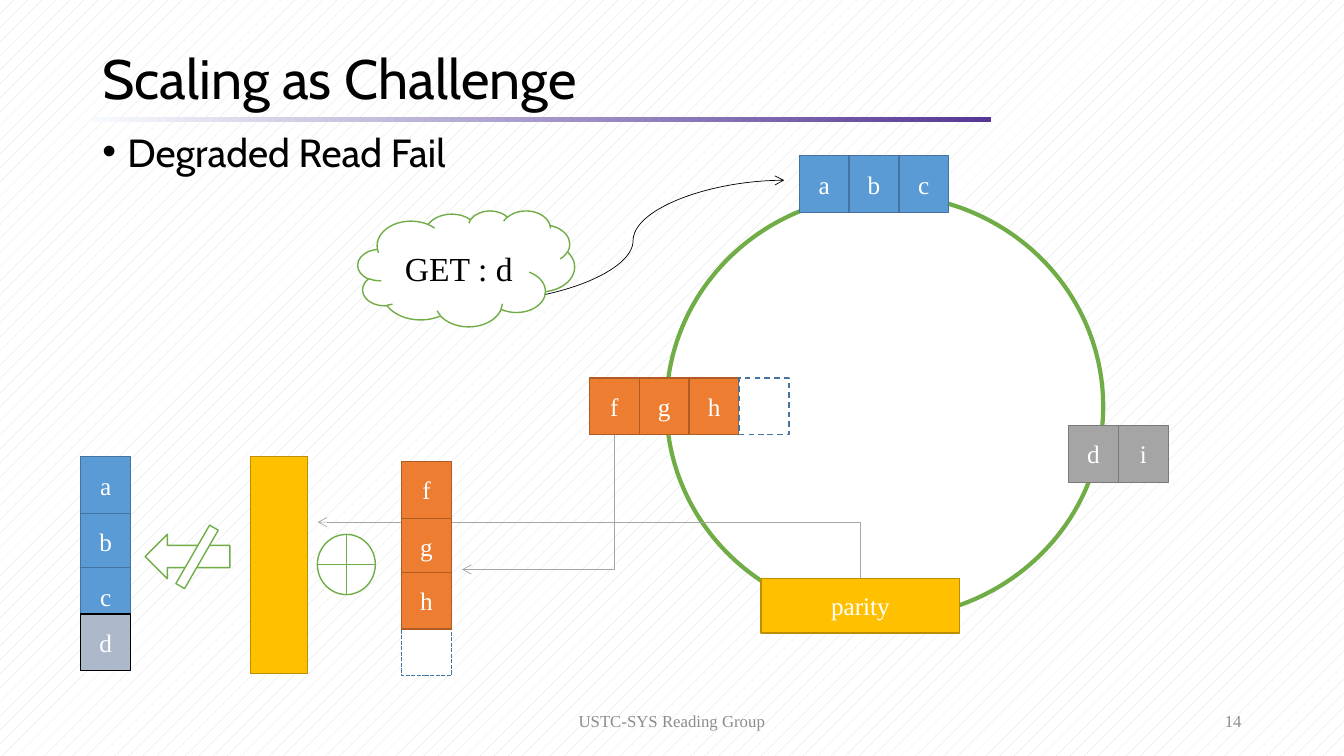
from collections import namedtuple
from dataclasses import dataclass

from lxml.etree import SubElement
from pptx import Presentation
from pptx.dml.color import RGBColor
from pptx.enum.dml import MSO_LINE, MSO_PATTERN
from pptx.enum.shapes import MSO_CONNECTOR, MSO_SHAPE
from pptx.enum.text import MSO_ANCHOR, PP_ALIGN
from pptx.oxml.ns import qn
from pptx.util import Pt

Box = namedtuple("Box", "left top width height")
Style = namedtuple("Style", "fill line dash", defaults=[None])


@dataclass(frozen=True)
class Theme:
    heading_font: str = "Cabin"
    body_font: str = "Times New Roman"
    title_size: float = 39.6
    bullet_size: float = 28
    request_size: float = 24
    cell_size: float = 18
    footer_size: float = 12
    black: str = "000000"
    white: str = "FFFFFF"
    footer: str = "8C8C8C"
    pattern: str = "D9D9D9"
    rule_start: str = "F7FAFD"
    rule_end: str = "543795"
    flow: str = "A6A6A6"
    blue: Style = Style("5B9BD5", "43739E")
    orange: Style = Style("ED7D31", "AF5C24")
    grey: Style = Style("A5A5A5", "7A7A7A")
    yellow: Style = Style("FFC000", "BD8E00")
    lost: Style = Style("ADB9CA", "000000")
    outline: Style = Style("FFFFFF", "70AD47")
    empty: Style = Style("FFFFFF", "43739E", MSO_LINE.DASH)
    empty_fine: Style = Style("FFFFFF", "43739E", MSO_LINE.SQUARE_DOT)


THEME = Theme()
CELL_WIDTH, CELL_HEIGHT = 35.6, 40.6
COLUMN_OFFSETS = (0, 40.3, 79.2, 112.3)


def color(value):
    return RGBColor.from_string(value)


def points(box):
    return [Pt(length) for length in box]


def add_run(paragraph, text, size, ink, font):
    run = paragraph.add_run()
    run.text = text
    run.font.size = Pt(size)
    run.font.name = font
    run.font.color.rgb = color(ink)


def add_text(slide, box, text, size, ink, font=THEME.body_font,
             align=PP_ALIGN.LEFT, anchor=MSO_ANCHOR.MIDDLE):
    frame = slide.shapes.add_textbox(*points(box)).text_frame
    frame.word_wrap = True
    frame.vertical_anchor = anchor
    paragraph = frame.paragraphs[0]
    paragraph.alignment = align
    add_run(paragraph, text, size, ink, font)
    return paragraph


def add_figure(slide, kind, box, style, text="", weight=1):
    shape = slide.shapes.add_shape(kind, *points(box))
    shape.shadow.inherit = False
    shape.fill.solid()
    shape.fill.fore_color.rgb = color(style.fill)
    shape.line.color.rgb = color(style.line)
    shape.line.width = Pt(weight)
    if style.dash:
        shape.line.dash_style = style.dash
    if text:
        frame = shape.text_frame
        frame.margin_left = frame.margin_right = 0
        frame.vertical_anchor = MSO_ANCHOR.MIDDLE
        paragraph = frame.paragraphs[0]
        paragraph.alignment = PP_ALIGN.CENTER
        add_run(paragraph, text, THEME.cell_size, THEME.white, THEME.body_font)
    return shape


def add_arrow(slide, kind, start, end, ink):
    connector = slide.shapes.add_connector(kind, *points(start + end))
    connector.line.color.rgb = color(ink)
    connector.line.width = Pt(0.5)
    SubElement(connector.line._get_or_add_ln(), qn("a:tailEnd"), type="arrow")
    SubElement(connector._element.spPr, qn("a:effectLst"))
    return connector


def add_corner_arrow(slide, source, side, start, end):
    """Leave the source vertically, turn once and run left to the end point."""
    connector = add_arrow(slide, MSO_CONNECTOR.ELBOW, start, end, THEME.flow)
    connector.begin_connect(source, side)
    across, down = start[0] - end[0], end[1] - start[1]
    width, height = abs(down), across
    connector.left = Pt((start[0] + end[0] - width) / 2)
    connector.top = Pt((start[1] + end[1] - height) / 2)
    connector.width, connector.height = Pt(width), Pt(height)
    properties = connector._element.spPr
    frame = properties.find(qn("a:xfrm"))
    frame.set("flipH", "0")
    frame.set("flipV", "0" if down > 0 else "1")
    frame.set("rot", str((90 if down > 0 else 270) * 60000))
    properties.find(qn("a:prstGeom")).set("prst", "bentConnector2")


def add_row(slide, left, top, cells):
    return [add_figure(slide, MSO_SHAPE.RECTANGLE,
                       Box(left + i * CELL_WIDTH, top, CELL_WIDTH, CELL_HEIGHT), style, label)
            for i, (label, style) in enumerate(cells)]


def add_column(slide, left, top, cells):
    """Stack cells, given in drawing order as (position, label, style)."""
    for position, label, style in cells:
        box = Box(left, top + COLUMN_OFFSETS[position], CELL_WIDTH, CELL_HEIGHT)
        add_figure(slide, MSO_SHAPE.RECTANGLE, box, style, label)


def add_header(slide, box):
    rule = add_figure(slide, MSO_SHAPE.RECTANGLE,
                      Box(box.left, box.top + 52.5, 642, 4), THEME.outline)
    rule.line.fill.background()
    rule.fill.gradient()
    rule.fill.gradient_angle = 0
    for stop, ink in zip(rule.fill.gradient_stops, (THEME.rule_start, THEME.rule_end)):
        stop.color.rgb = color(ink)
    title = add_text(slide, box._replace(height=54), "Scaling as Challenge",
                     THEME.title_size, THEME.black, THEME.heading_font)
    title.line_spacing = 0.9
    bullet = add_text(slide, Box(box.left, box.top + 63.3, box.width, 44), "Degraded Read Fail",
                      THEME.bullet_size, THEME.black, THEME.heading_font,
                      anchor=MSO_ANCHOR.TOP)
    bullet.line_spacing = 0.8
    properties = bullet._p.get_or_add_pPr()
    properties.set("marL", str(Pt(18)))
    properties.set("indent", str(-Pt(18)))
    SubElement(properties, qn("a:buFont"), typeface="Arial")
    SubElement(properties, qn("a:buChar"), char="•")


def add_footer(slide, box):
    add_text(slide, box._replace(left=box.left + 252, width=324), "USTC-SYS Reading Group",
             THEME.footer_size, THEME.footer, align=PP_ALIGN.CENTER)
    add_text(slide, box._replace(left=box.left + box.width - 216, width=216), "14",
             THEME.footer_size, THEME.footer, align=PP_ALIGN.RIGHT)


def add_ring(slide, box):
    """Draw the ring with its nodes; return the first orange cell and the parity node."""
    left, top = box.left, box.top
    add_figure(slide, MSO_SHAPE.OVAL, box, THEME.outline, weight=3)
    orange = add_row(slide, left - 54.9, top + 131,
                     [(label, THEME.orange) for label in "fgh"] + [("", THEME.empty)])
    add_row(slide, left + 94.9, top - 27.8, [(label, THEME.blue) for label in "abc"])
    add_row(slide, left + 287.3, top + 164.9, [(label, THEME.grey) for label in "di"])
    parity = add_figure(slide, MSO_SHAPE.RECTANGLE, Box(left + 67.6, top + 274.2, 142, 39),
                        THEME.yellow, "parity")
    return orange[0], parity


def add_request(slide, box):
    right = box.left + box.width
    add_arrow(slide, MSO_CONNECTOR.CURVE, (right - 66.2, box.top + 64.8),
              (right + 149.8, box.top - 21.6), THEME.black)
    add_figure(slide, MSO_SHAPE.CLOUD, box, THEME.outline)
    add_text(slide, Box(box.left + 26.6, box.top + 23, 128, 36), "GET : d",
             THEME.request_size, THEME.black, anchor=MSO_ANCHOR.TOP)


def add_decoding(slide, box, orange, parity):
    left, top = box.left, box.top
    add_corner_arrow(slide, orange, 2, (439, 310.6), (left + 272.2, top + 80.6))
    add_corner_arrow(slide, parity, 0, (614.5, 413.2), (left + 169.2, top + 46.8))
    add_figure(slide, MSO_SHAPE.RECTANGLE, Box(left + 121.2, top, 40.6, box.height), THEME.yellow)
    add_figure(slide, MSO_SHAPE.FLOWCHART_OR, Box(left + 169, top + 55.5, 41.4, 43), THEME.outline)
    add_column(slide, left + 229.2, top + 3.4,
               [(1, "g", THEME.orange), (3, "", THEME.empty_fine),
                (0, "f", THEME.orange), (2, "h", THEME.orange)])
    add_figure(slide, MSO_SHAPE.LEFT_ARROW, Box(left + 46, top + 55.5, 60.5, 31.7), THEME.outline)
    slash = add_figure(slide, MSO_SHAPE.RECTANGLE, Box(left + 79.5, top + 47.5, 7.2, 48.2),
                       THEME.outline)
    slash.rotation = 30
    add_column(slide, left, top, [(1, "b", THEME.blue), (2, "c", THEME.blue),
                                  (3, "d", THEME.lost), (0, "a", THEME.blue)])


def main():
    presentation = Presentation()
    presentation.slide_width, presentation.slide_height = Pt(960), Pt(540)
    slide = presentation.slides.add_slide(presentation.slide_layouts[6])
    background = slide.background.fill
    background.patterned()
    background.pattern = MSO_PATTERN.PERCENT_5
    background.fore_color.rgb = color(THEME.pattern)
    background.back_color.rgb = color(THEME.white)
    add_header(slide, Box(66, 31, 828, 110))
    add_footer(slide, Box(66, 500.4, 828, 28.8))
    orange, parity = add_ring(slide, Box(476, 139, 312, 302.4))
    add_decoding(slide, Box(57.7, 326.2, 265, 154.8), orange, parity)
    add_request(slide, Box(255.6, 150.4, 154.8, 82.8))
    presentation.save("out.pptx")


if __name__ == "__main__":
    main()
